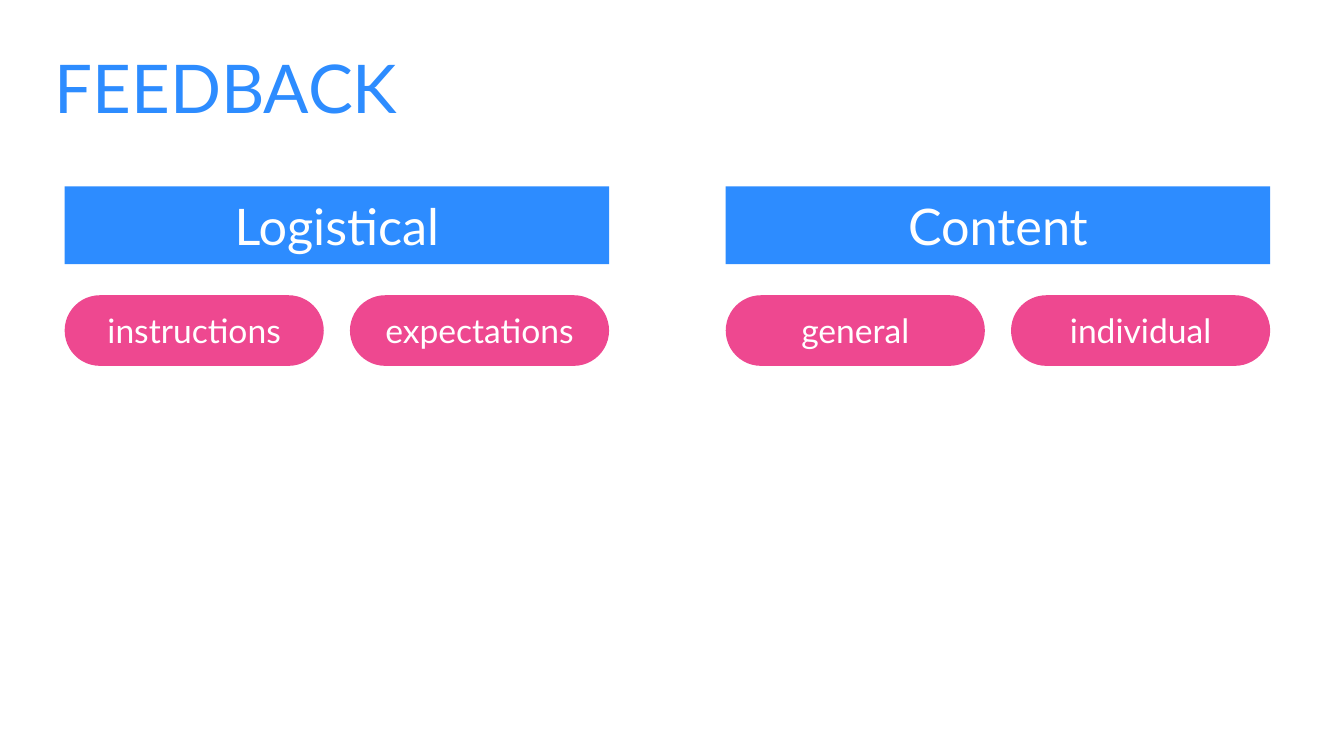
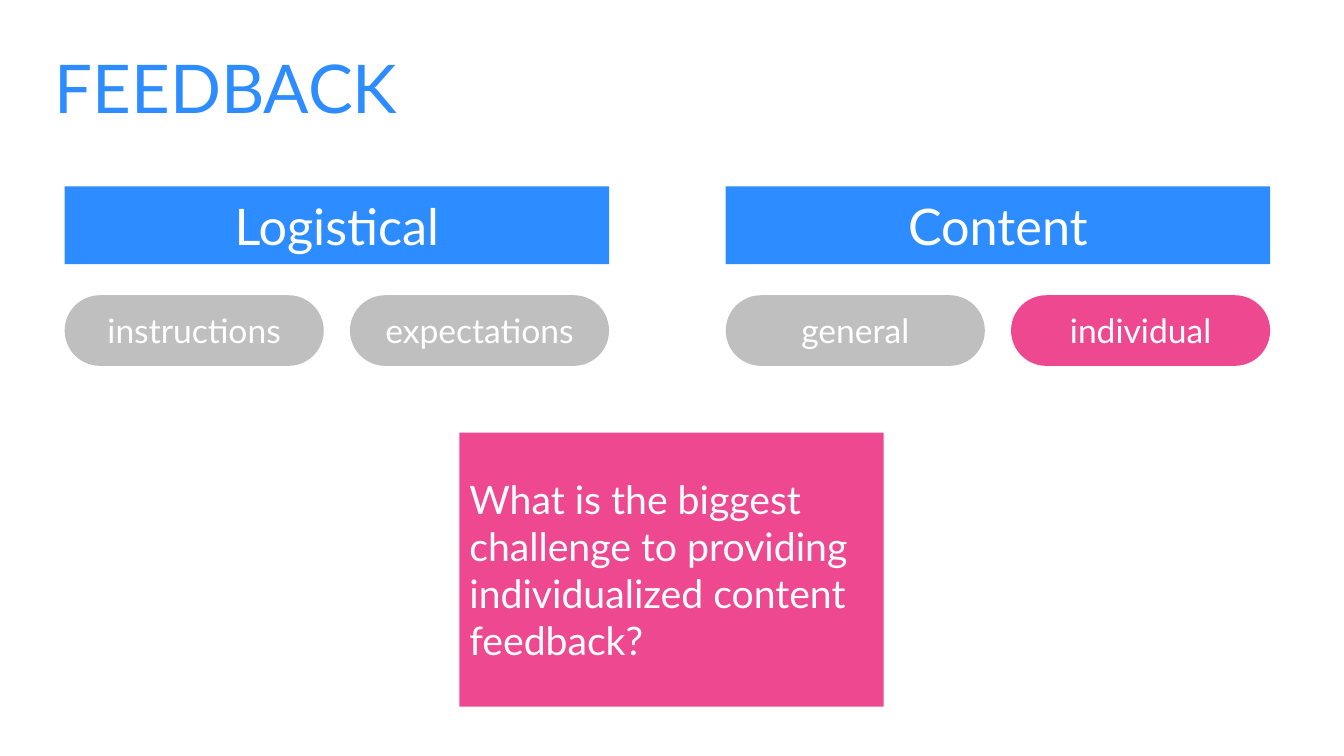
import pptx
import pptx.dml.color
import pptx.enum.shapes
import pptx.enum.text
import pptx.util

Cm = pptx.util.Cm
SHAPE = pptx.enum.shapes.MSO_SHAPE
ALIGN = pptx.enum.text.PP_ALIGN

COLORS = {"blue": "2D8CFF", "pink": "EE4890", "gray": "BFBFBF", "white": "FFFFFF"}
FONT = "Lato"

# Grid, in centimetres
LEFT, COL_W, COL_STEP = 1.63, 13.72, 16.66
HEAD_TOP, HEAD_H = 4.7, 1.96
PILL_TOP, PILL_W, PILL_H = 7.44, 6.53, 1.78

TOPICS = {
    "Logistical": ["instructions", "expectations"],
    "Content": ["general", "individual"],
}


def rgb(name):
    return pptx.dml.color.RGBColor.from_string(COLORS[name])


def write(sp, text, size=24, color="white", align=ALIGN.CENTER):
    """Put formatted, vertically centred text in a shape."""
    tf = sp.text_frame
    tf.word_wrap = True
    tf.auto_size = pptx.enum.text.MSO_AUTO_SIZE.NONE
    tf.vertical_anchor = pptx.enum.text.MSO_ANCHOR.MIDDLE
    p = tf.paragraphs[0]
    p.alignment = align
    r = p.add_run()
    r.text = text
    r.font.name = FONT
    r.font.size = pptx.util.Pt(size)
    r.font.color.rgb = rgb(color)


class Deck:
    def __init__(self):
        self.prs = pptx.Presentation()
        self.prs.slide_width = Cm(33.87)
        self.prs.slide_height = Cm(19.05)
        self.slide = None

    def new_slide(self, title):
        self.slide = self.prs.slides.add_slide(self.prs.slide_layouts[5])
        sp = self.slide.shapes.title
        sp.left, sp.top, sp.width, sp.height = Cm(1.12), Cm(1.24), Cm(31.6), Cm(1.88)
        write(sp, title, size=48, color="blue", align=ALIGN.LEFT)

    def box(self, x, y, w, h, text, fill, kind=SHAPE.RECTANGLE, **fmt):
        sp = self.slide.shapes.add_shape(kind, Cm(x), Cm(y), Cm(w), Cm(h))
        sp.shadow.inherit = False
        sp.fill.solid()
        sp.fill.fore_color.rgb = rgb(fill)
        sp.line.fill.background()
        write(sp, text, **fmt)
        return sp

    def header(self, x, text):
        self.box(x, HEAD_TOP, COL_W, HEAD_H, text, "blue", size=36)

    def pill(self, x, text, fill):
        sp = self.box(x, PILL_TOP, PILL_W, PILL_H, text, fill,
                      kind=SHAPE.ROUNDED_RECTANGLE)
        sp.adjustments[0] = 0.5

    def callout(self, text):
        self.box(11.58, 10.9, 10.69, 6.91, text, "pink", size=28, align=ALIGN.LEFT)

    def feedback(self, active=None):
        """Topic overview; with an active kind, the others turn gray."""
        self.new_slide("FEEDBACK")
        for col, (topic, kinds) in enumerate(TOPICS.items()):
            x = LEFT + col * COL_STEP
            self.header(x, topic)
            for i, kind in enumerate(kinds):
                fill = "pink" if active in (None, kind) else "gray"
                self.pill(x + i * (COL_W - PILL_W), kind, fill)


def main():
    deck = Deck()

    # Slide 1: all kinds of feedback
    deck.feedback()

    # Slide 2: focus on individual feedback
    deck.feedback(active="individual")
    deck.callout("What is the biggest challenge to providing "
                 "individualized content feedback?")

    deck.prs.save("out.pptx")


if __name__ == "__main__":
    main()
